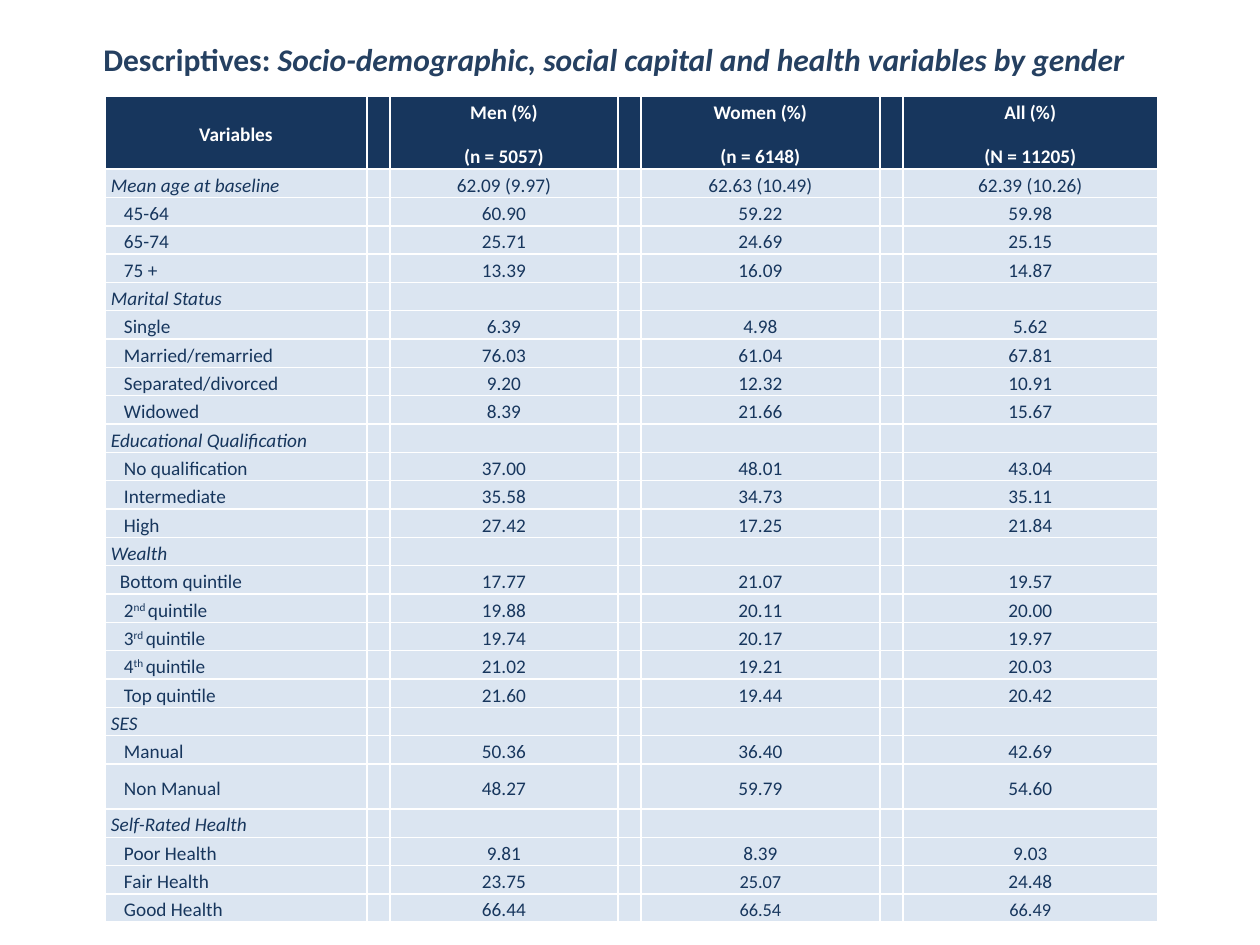
from lxml import etree
from pptx import Presentation, util as u
from pptx.dml.color import RGBColor
from pptx.enum import text
from pptx.oxml.ns import qn

# Content
TITLE = ("Descriptives:", " Socio-demographic, social capital and health variables by gender")
HEADINGS = ["Variables", "Men (%)\n(n = 5057)", "Women (%)\n(n = 6148)", "All (%)\n(N = 11205)"]
# Each group: its heading row, then its categories; "|" sets off a raised ordinal
GROUPS = [
    (("Mean age at baseline", "62.09 (9.97)", "62.63 (10.49)", "62.39 (10.26)"), [
        ("45-64", "60.90", "59.22", "59.98"),
        ("65-74", "25.71", "24.69", "25.15"),
        ("75 +", "13.39", "16.09", "14.87")]),
    (("Marital Status", "", "", ""), [
        ("Single", "6.39", "4.98", "5.62"),
        ("Married/remarried", "76.03", "61.04", "67.81"),
        ("Separated/divorced", "9.20", "12.32", "10.91"),
        ("Widowed", "8.39", "21.66", "15.67")]),
    (("Educational Qualification", "", "", ""), [
        ("No qualification", "37.00", "48.01", "43.04"),
        ("Intermediate", "35.58", "34.73", "35.11"),
        ("High", "27.42", "17.25", "21.84")]),
    (("Wealth", "", "", ""), [
        ("Bottom quintile", "17.77", "21.07", "19.57"),
        ("2|nd |quintile", "19.88", "20.11", "20.00"),
        ("3|rd |quintile", "19.74", "20.17", "19.97"),
        ("4|th |quintile", "21.02", "19.21", "20.03"),
        ("Top quintile", "21.60", "19.44", "20.42")]),
    (("SES", "", "", ""), [
        ("Manual", "50.36", "36.40", "42.69"),
        ("Non Manual", "48.27", "59.79", "54.60")]),
    (("Self-Rated Health", "", "", ""), [
        ("Poor Health", "9.81", "8.39", "9.03"),
        ("Fair Health", "23.75", "25.07", "24.48"),
        ("Good Health", "66.44", "66.54", "66.49")]),
]
SMALLER = {"25.07", "66.54", "66.49"}

# Style and measures, in px
COLORS = {"title": "254061", "navy": "17365D", "pale": "DBE5F1", "white": "FFFFFF"}
FONT = "Calibri"
PX = u.Inches(1) / 126
COLUMNS = [262, 23, 228, 23, 239, 23, 255]
HEADER_H, ROW_H, TALL_ROW_H = 73, 28, 45
TABLE_LEFT, TABLE_TOP = 105, 96
INDENT, BOTTOM_INDENT = 13, 9


def px(n):
    return u.Emu(round(n * PX))


def style_font(font, size, color, bold=False, italic=False):
    font.name, font.size = FONT, u.Pt(size)
    font.bold, font.italic = bold, italic
    font.color.rgb = RGBColor.from_string(COLORS[color])


def add_borders(cell):
    props = cell._tc.get_or_add_tcPr()
    for side in ("lnL", "lnR", "lnT", "lnB"):
        line = etree.SubElement(props, qn(f"a:{side}"), w=str(u.Pt(1)))
        fill = etree.SubElement(line, qn("a:solidFill"))
        etree.SubElement(fill, qn("a:srgbClr"), val=COLORS["white"])


def fill_cell(cell, words, header=False, italic=False, centred=True, indent=0):
    add_borders(cell)
    cell.fill.solid()
    cell.fill.fore_color.rgb = RGBColor.from_string(COLORS["navy" if header else "pale"])
    cell.vertical_anchor = text.MSO_ANCHOR.MIDDLE
    cell.margin_left = cell.margin_right = px(6)
    cell.margin_top, cell.margin_bottom = px(1), 0
    for i, line in enumerate(words.split("\n")):
        frame = cell.text_frame
        paragraph = frame.add_paragraph() if i else frame.paragraphs[0]
        paragraph.alignment = text.PP_ALIGN.CENTER if centred else text.PP_ALIGN.LEFT
        paragraph.line_spacing, paragraph.space_after = 1.15, u.Pt(10)
        if indent:
            paragraph._p.get_or_add_pPr().set("marL", str(px(indent)))
        size = 10.5 if line in SMALLER else 11
        style_font(paragraph.font, size, "white" if header else "navy", header, italic)
        if not line:
            paragraph._p.get_or_add_endParaRPr().set("sz", str(size * 100))
            continue
        for part, piece in enumerate(line.split("|")):
            run = paragraph.add_run()
            run.text = piece
            if part == 1:
                run._r.get_or_add_rPr().set("baseline", "30000")


def add_title(slide):
    box = slide.shapes.add_textbox(px(91), px(34), px(1134), px(50))
    frame = box.text_frame
    frame.word_wrap = True
    frame.vertical_anchor = text.MSO_ANCHOR.MIDDLE
    for part, words in enumerate(TITLE):
        run = frame.paragraphs[0].add_run()
        run.text = words
        style_font(run.font, 18, "title", bold=True, italic=part == 1)


def add_descriptives(slide):
    # Flatten the groups into (row, is group heading)
    rows = []
    for heading, categories in GROUPS:
        rows.append((heading, True))
        rows += [(category, False) for category in categories]
    heights = [HEADER_H] + [TALL_ROW_H if row[0] == "Non Manual" else ROW_H for row, _ in rows]

    table = slide.shapes.add_table(len(heights), len(COLUMNS), px(TABLE_LEFT), px(TABLE_TOP),
                                   px(sum(COLUMNS)), px(sum(heights))).table
    table.first_row = table.horz_banding = False
    for column, width in zip(table.columns, COLUMNS):
        column.width = px(width)
    for row, height in zip(table.rows, heights):
        row.height = px(height)

    # Content sits in every other column, with narrow spacers between
    for c in range(len(COLUMNS)):
        def words_of(row):
            return "" if c % 2 else row[c // 2]

        fill_cell(table.cell(0, c), words_of(HEADINGS), header=True)
        for r, (row, is_heading) in enumerate(rows, 1):
            label = c == 0
            indent = BOTTOM_INDENT if row[0] == "Bottom quintile" else INDENT
            fill_cell(table.cell(r, c), words_of(row), italic=label and is_heading,
                      centred=not label, indent=indent if label and not is_heading else 0)


def main():
    deck = Presentation()
    deck.slide_width, deck.slide_height = px(1260), px(945)
    slide = deck.slides.add_slide(deck.slide_layouts[6])
    add_descriptives(slide)
    add_title(slide)
    deck.save("out.pptx")


if __name__ == "__main__":
    main()
